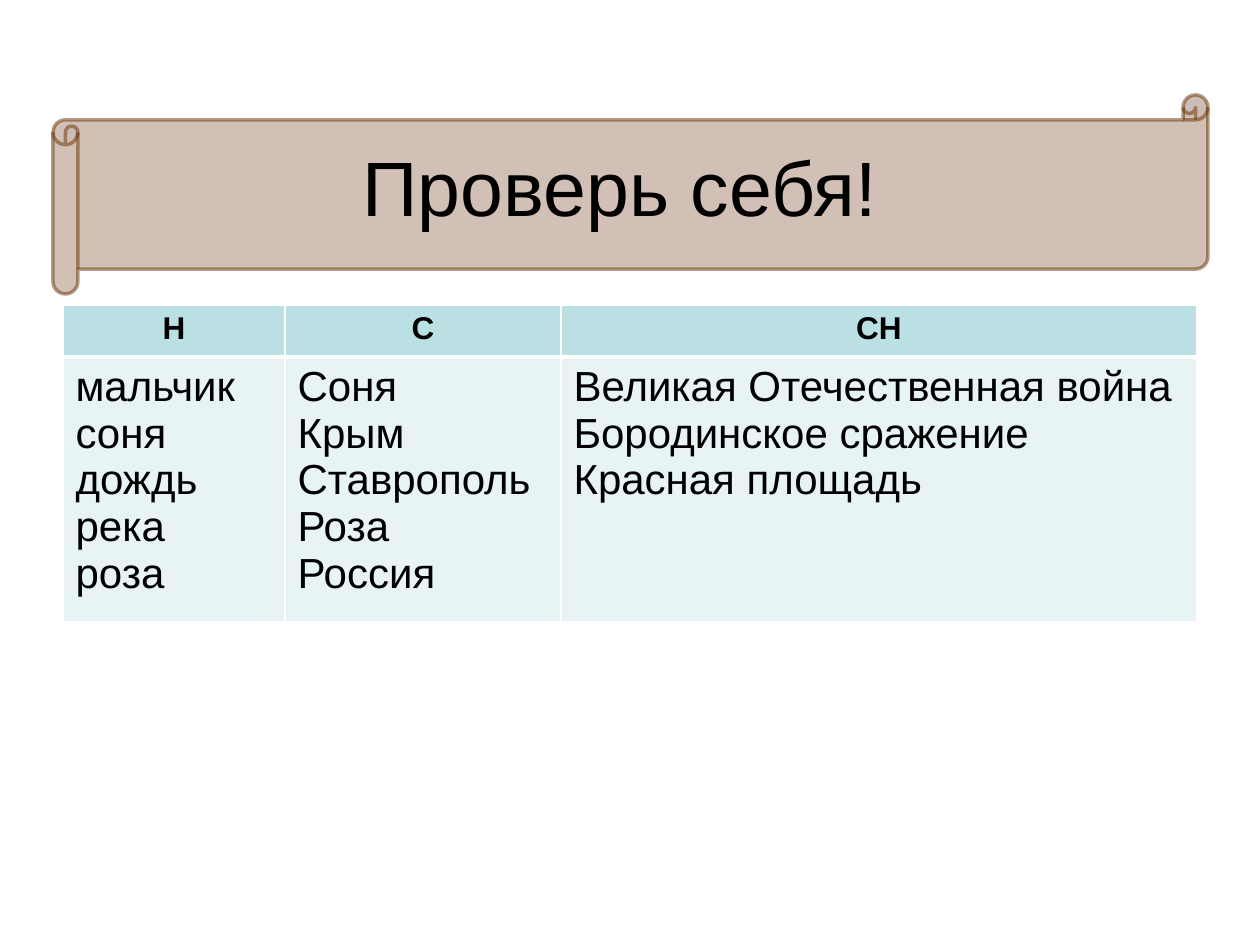
from lxml import etree
from pptx import Presentation
from pptx.dml.color import RGBColor
from pptx.enum.shapes import MSO_SHAPE
from pptx.enum.text import MSO_ANCHOR, PP_ALIGN
from pptx.oxml.ns import qn
from pptx.util import Pt

SCROLL = MSO_SHAPE.HORIZONTAL_SCROLL
MIDDLE = MSO_ANCHOR.MIDDLE
LEFT, CENTER = PP_ALIGN.LEFT, PP_ALIGN.CENTER

EMU_PER_PX = 914400 / 126
FONT = "Arial"
COLORS = {
    "text": "000000",
    "scroll": "662406",
    "scroll_line": "663300",
    "header": "BBE0E3",
    "body": "E7F3F4",
    "border": "FFFFFF",
}
COLUMNS = [
    ("Н", 222, ["мальчик", "соня", "дождь", "река", "роза"]),
    ("С", 276, ["Соня", "Крым", "Ставрополь", "Роза", "Россия"]),
    ("СН", 636, ["Великая Отечественная война", "Бородинское сражение",
                 "Красная площадь"]),
]
ROW_HEIGHTS = [52, 247]


def px(n):
    return round(n * EMU_PER_PX)


def rgb(name):
    return RGBColor.from_string(COLORS[name])


def set_alpha(fill, percent):
    """Make the solid fill under the given XML element partly transparent."""
    color = fill.find(".//" + qn("a:srgbClr"))
    etree.SubElement(color, qn("a:alpha")).set("val", str(percent * 1000))


def write(tf, lines, size, align, bold=False):
    tf.text = "\n".join(lines)
    for p in tf.paragraphs:
        p.alignment = align
        for r in p.runs:
            r.font.name = FONT
            r.font.size = Pt(size)
            r.font.bold = bold
            r.font.color.rgb = rgb("text")


def add_scroll(slide, x, y, w, h):
    sp = slide.shapes.add_shape(SCROLL, px(x), px(y), px(w), px(h))
    sp.shadow.inherit = False
    sp.fill.solid()
    sp.fill.fore_color.rgb = rgb("scroll")
    sp.line.color.rgb = rgb("scroll_line")
    sp.line.width = Pt(2)
    sp_pr = sp._element.spPr
    set_alpha(sp_pr.find(qn("a:solidFill")), 29)
    set_alpha(sp_pr.find(qn("a:ln")), 50)


def add_title(slide, text, x, y, w, h):
    tf = slide.shapes.add_textbox(px(x), px(y), px(w), px(h)).text_frame
    tf.word_wrap = True
    tf.vertical_anchor = MIDDLE
    write(tf, [text], 44, CENTER)


def set_borders(cell, **widths):
    """Draw cell borders, with widths in points; call before filling the cell."""
    tc_pr = cell._tc.get_or_add_tcPr()
    for side in "LRTB":
        ln = etree.SubElement(tc_pr, qn("a:ln" + side))
        ln.set("w", str(Pt(widths.get(side, 1))))
        fill = etree.SubElement(ln, qn("a:solidFill"))
        etree.SubElement(fill, qn("a:srgbClr")).set("val", COLORS["border"])


def fill_cell(cell, color):
    cell.fill.solid()
    cell.fill.fore_color.rgb = rgb(color)


def add_word_table(slide, x, y):
    width = sum(w for _, w, _ in COLUMNS)
    table = slide.shapes.add_table(len(ROW_HEIGHTS), len(COLUMNS), px(x), px(y),
                                   px(width), px(sum(ROW_HEIGHTS))).table
    for row, height in zip(table.rows, ROW_HEIGHTS):
        row.height = px(height)
    for i, (heading, col_width, words) in enumerate(COLUMNS):
        table.columns[i].width = px(col_width)
        header, body = table.cell(0, i), table.cell(1, i)
        set_borders(header, B=3)
        fill_cell(header, "header")
        write(header.text_frame, [heading], 18, CENTER, bold=True)
        set_borders(body, T=3)
        fill_cell(body, "body")
        write(body.text_frame, words, 24, LEFT)


def main():
    prs = Presentation()
    prs.slide_width, prs.slide_height = px(1260), px(945)
    slide = prs.slides.add_slide(prs.slide_layouts[6])
    add_scroll(slide, 53, 95, 1155, 199)
    add_title(slide, "Проверь себя!", 53, 105, 1134, 161)
    add_word_table(slide, 63, 305)
    prs.save("out.pptx")


if __name__ == "__main__":
    main()
